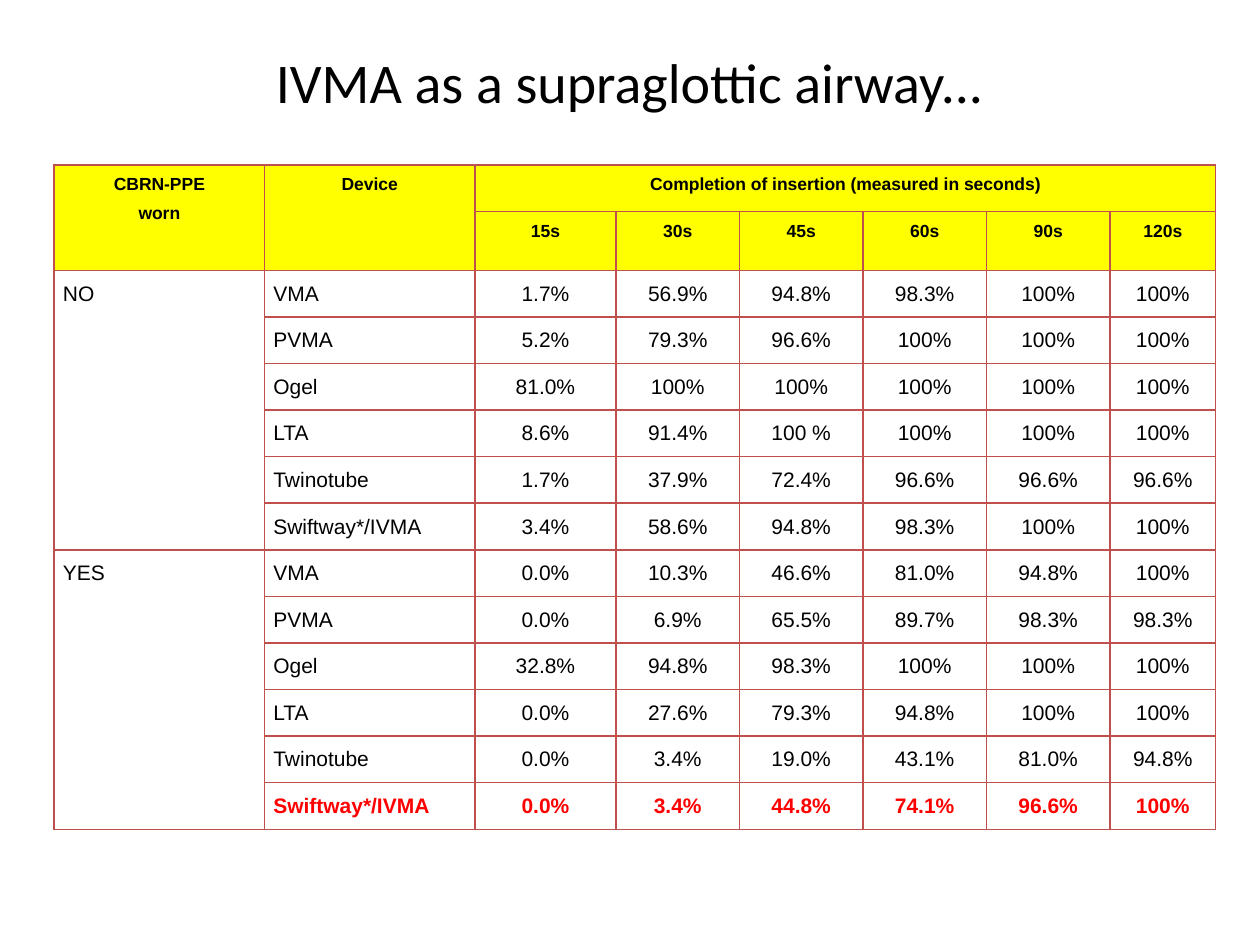
import lxml.etree
import pptx
import pptx.dml.color
import pptx.enum.text
import pptx.oxml.ns
import pptx.util

BLACK = pptx.dml.color.RGBColor(0x00, 0x00, 0x00)
RED = pptx.dml.color.RGBColor(0xFF, 0x00, 0x00)
YELLOW = pptx.dml.color.RGBColor(0xFF, 0xFF, 0x00)
BORDER = pptx.dml.color.RGBColor(0xC0, 0x50, 0x4D)
CENTER = pptx.enum.text.PP_ALIGN.CENTER
LEFT = pptx.enum.text.PP_ALIGN.LEFT
Inches = pptx.util.Inches

HEADER_ROWS = 2
LABEL_COLUMNS = 2
COLUMN_WIDTHS = [1.67] * 2 + [1.12] + [0.98] * 4 + [0.84]
ROW_HEIGHTS = [0.37, 0.46] + [0.37] * 12
ROWS = [
    ["CBRN-PPE\nworn", "Device", "Completion of insertion (measured in seconds)", "", "", "", "", ""],
    ["", "", "15s", "30s", "45s", "60s", "90s", "120s"],
    ["NO", "VMA", "1.7%", "56.9%", "94.8%", "98.3%", "100%", "100%"],
    ["", "PVMA", "5.2%", "79.3%", "96.6%", "100%", "100%", "100%"],
    ["", "Ogel", "81.0%", "100%", "100%", "100%", "100%", "100%"],
    ["", "LTA", "8.6%", "91.4%", "100 %", "100%", "100%", "100%"],
    ["", "Twinotube", "1.7%", "37.9%", "72.4%", "96.6%", "96.6%", "96.6%"],
    ["", "Swiftway*/IVMA", "3.4%", "58.6%", "94.8%", "98.3%", "100%", "100%"],
    ["YES", "VMA", "0.0%", "10.3%", "46.6%", "81.0%", "94.8%", "100%"],
    ["", "PVMA", "0.0%", "6.9%", "65.5%", "89.7%", "98.3%", "98.3%"],
    ["", "Ogel", "32.8%", "94.8%", "98.3%", "100%", "100%", "100%"],
    ["", "LTA", "0.0%", "27.6%", "79.3%", "94.8%", "100%", "100%"],
    ["", "Twinotube", "0.0%", "3.4%", "19.0%", "43.1%", "81.0%", "94.8%"],
    ["", "Swiftway*/IVMA", "0.0%", "3.4%", "44.8%", "74.1%", "96.6%", "100%"],
]
# First and last cell of each merged block
MERGES = [((0, 0), (1, 0)), ((0, 1), (1, 1)), ((0, 2), (0, 7)),
          ((2, 0), (7, 0)), ((8, 0), (13, 0))]


def add_borders(cell):
    properties = cell._tc.get_or_add_tcPr()
    qn = pptx.oxml.ns.qn
    for side in ("a:lnL", "a:lnR", "a:lnT", "a:lnB"):
        line = lxml.etree.SubElement(properties, qn(side), w=str(pptx.util.Pt(1)))
        fill = lxml.etree.SubElement(line, qn("a:solidFill"))
        lxml.etree.SubElement(fill, qn("a:srgbClr"), val=str(BORDER))


deck = pptx.Presentation()
deck.slide_width, deck.slide_height = Inches(10), Inches(7.5)
page = deck.slides.add_slide(deck.slide_layouts[5])

# Title
title = page.shapes.title
title.left, title.top = Inches(0.5), Inches(0.3)
title.width, title.height = Inches(9), Inches(0.69)
title.text_frame.text = "IVMA as a supraglottic airway..."
title.text_frame.vertical_anchor = pptx.enum.text.MSO_ANCHOR.MIDDLE
para = title.text_frame.paragraphs[0]
para.alignment = CENTER
para.font.name, para.font.size = "Calibri", pptx.util.Pt(32)
para.font.color.rgb = BLACK

# Table grid
table = page.shapes.add_table(
    len(ROWS), len(COLUMN_WIDTHS), Inches(0.43), Inches(1.31),
    Inches(sum(COLUMN_WIDTHS)), Inches(sum(ROW_HEIGHTS))).table
table.first_row = table.horz_banding = False
for column, width in zip(table.columns, COLUMN_WIDTHS):
    column.width = Inches(width)
for row, height in zip(table.rows, ROW_HEIGHTS):
    row.height = Inches(height)

# Cell text and formatting
for r, texts in enumerate(ROWS):
    header = r < HEADER_ROWS
    for c, text in enumerate(texts):
        cell = table.cell(r, c)
        highlighted = r == len(ROWS) - 1 and c > 0
        cell.margin_left = cell.margin_right = Inches(0.07)
        cell.margin_top = cell.margin_bottom = 0
        add_borders(cell)
        if header:
            cell.fill.solid()
            cell.fill.fore_color.rgb = YELLOW
        else:
            cell.fill.background()
        cell.text = text
        for para in cell.text_frame.paragraphs:
            para.alignment = CENTER if header or c >= LABEL_COLUMNS else LEFT
            para.line_spacing = 1.5
            para.font.name = "Arial"
            para.font.size = pptx.util.Pt(10 if header else 12)
            para.font.bold = header or highlighted
            para.font.color.rgb = RED if highlighted else BLACK

# Merged headings and groups
for first, last in MERGES:
    table.cell(*first).merge(table.cell(*last))

deck.save("out.pptx")
